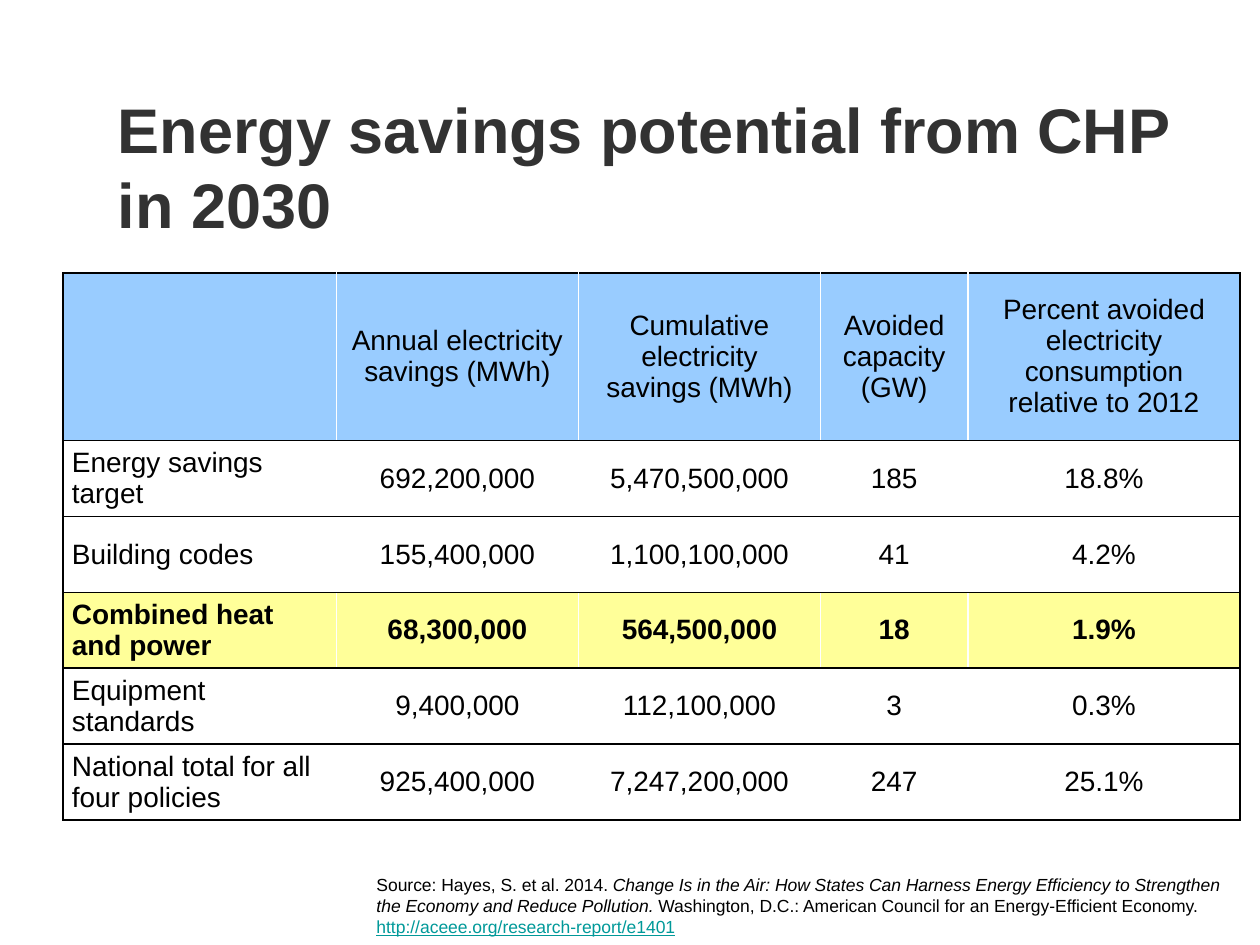
from lxml.etree import SubElement
from pptx import Presentation
from pptx.dml.color import RGBColor
from pptx.enum.text import MSO_ANCHOR, MSO_AUTO_SIZE, PP_ALIGN
from pptx.oxml.ns import qn
from pptx.util import Cm, Pt


def add_run(paragraph, text, size, color="000000", bold=False, italic=False, underline=False):
    run = paragraph.add_run()
    run.text = text
    font = run.font
    font.name, font.size = "Arial", Pt(size)
    font.bold, font.italic, font.underline = bold, italic, underline
    font.color.rgb = RGBColor.from_string(color)


def set_borders(cell, **colors):
    """Draw 1 pt cell borders; keys are L, R, T and B, in that order."""
    properties = cell._tc.get_or_add_tcPr()
    for position, (side, color) in enumerate(colors.items()):
        line = properties.makeelement(qn(f"a:ln{side}"), {"w": str(Pt(1))})
        fill = SubElement(line, qn("a:solidFill"))
        SubElement(fill, qn("a:srgbClr"), val=color)
        properties.insert(position, line)


prs = Presentation()
prs.slide_width, prs.slide_height = Cm(25.4), Cm(19.05)
slide = prs.slides.add_slide(prs.slide_layouts[5])

title = slide.shapes.title
title.left, title.top, title.width, title.height = Cm(2.12), Cm(1.69), Cm(22.01), Cm(3.18)
heading = title.text_frame
heading.auto_size = MSO_AUTO_SIZE.NONE
heading.vertical_anchor = MSO_ANCHOR.BOTTOM
heading.margin_bottom = 0
heading.paragraphs[0].alignment = PP_ALIGN.LEFT
add_run(heading.paragraphs[0], "Energy savings potential from CHP in 2030", 36, "323232", bold=True)

savings = [
    ["", "Annual electricity savings (MWh)", "Cumulative electricity\nsavings (MWh)",
     "Avoided capacity (GW)", "Percent avoided electricity consumption relative to 2012"],
    ["Energy savings target", "692,200,000", "5,470,500,000", "185", "18.8%"],
    ["Building codes", "155,400,000", "1,100,100,000", "41", "4.2%"],
    ["Combined heat and power", "68,300,000", "564,500,000", "18", "1.9%"],
    ["Equipment standards", "9,400,000", "112,100,000", "3", "0.3%"],
    ["National total for all four policies", "925,400,000", "7,247,200,000", "247", "25.1%"],
]
column_widths = [5.51, 4.88, 4.88, 2.97, 5.49]
row_heights = [3.38] + [1.53] * 5
row_fills = {0: "99CCFF", 3: "FFFF99"}
highlighted_row = 3
last_column = len(column_widths) - 1

table = slide.shapes.add_table(len(savings), len(column_widths), Cm(1.27), Cm(5.5),
                               Cm(sum(column_widths)), Cm(sum(row_heights))).table
for column, width in zip(table.columns, column_widths):
    column.width = Cm(width)
for row, height in zip(table.rows, row_heights):
    row.height = Cm(height)

for r, entries in enumerate(savings):
    for c, entry in enumerate(entries):
        cell = table.cell(r, c)
        cell.fill.solid()
        cell.fill.fore_color.rgb = RGBColor.from_string(row_fills.get(r, "FFFFFF"))
        set_borders(cell, L="000000" if c == 0 else "FFFFFF",
                    R="000000" if c == last_column else "FFFFFF", T="000000", B="000000")
        cell.vertical_anchor = MSO_ANCHOR.MIDDLE
        cell.margin_left = cell.margin_right = Cm(0.18)
        cell.margin_top = cell.margin_bottom = 0
        for i, line_text in enumerate(entry.split("\n") if entry else []):
            paragraph = cell.text_frame.add_paragraph() if i else cell.text_frame.paragraphs[0]
            paragraph.alignment = PP_ALIGN.CENTER if c else PP_ALIGN.LEFT
            add_run(paragraph, line_text, 16, bold=r == highlighted_row)

source = slide.shapes.add_textbox(Cm(7.34), Cm(17.5), Cm(17.98), Cm(1.55)).text_frame
source.word_wrap = True
source.auto_size = MSO_AUTO_SIZE.SHAPE_TO_FIT_TEXT
citation = source.paragraphs[0]
add_run(citation, "Source: Hayes, S. et al. 2014. ", 10)
add_run(citation, "Change Is in the Air: How States Can Harness Energy Efficiency to Strengthen "
        "the Economy and Reduce Pollution. ", 10, italic=True)
add_run(citation, "Washington, D.C.: American Council for an Energy-Efficient Economy. ", 10)
add_run(citation, "http://aceee.org/research-report/e1401", 10, "009999", underline=True)

prs.save("out.pptx")
